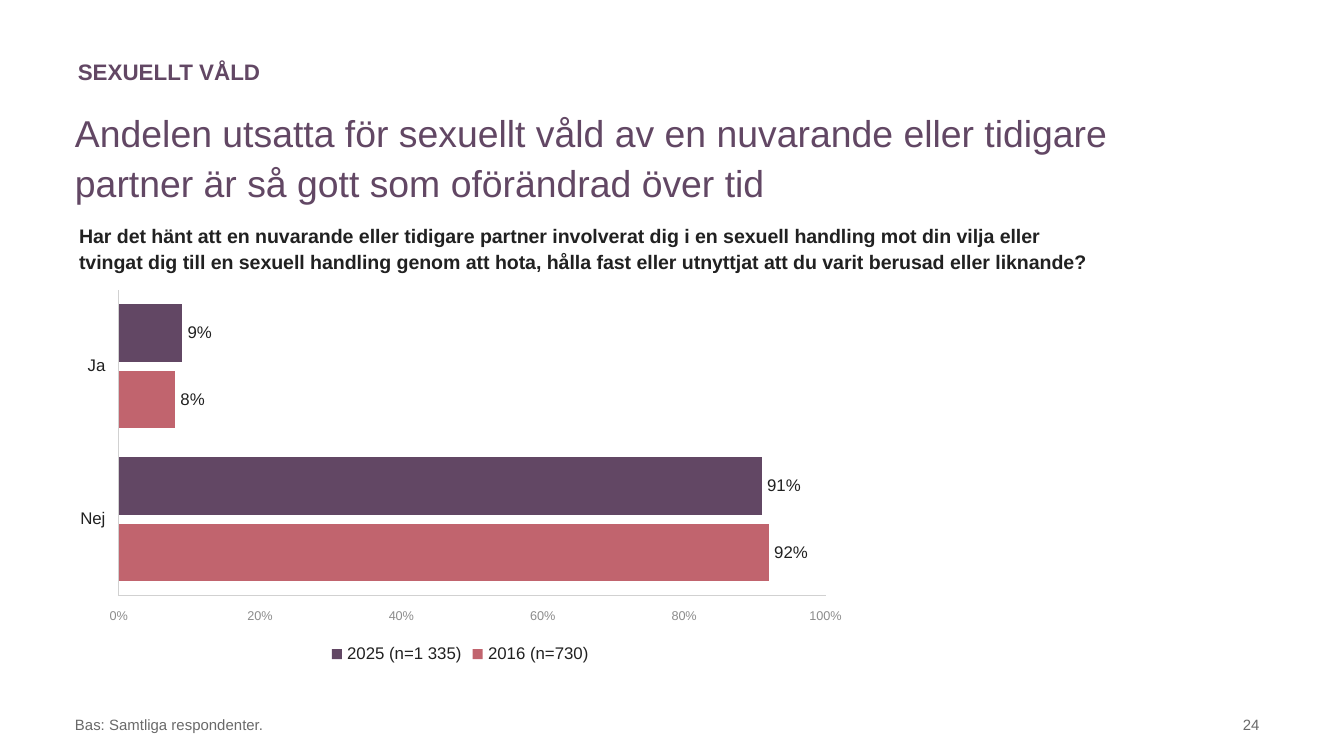
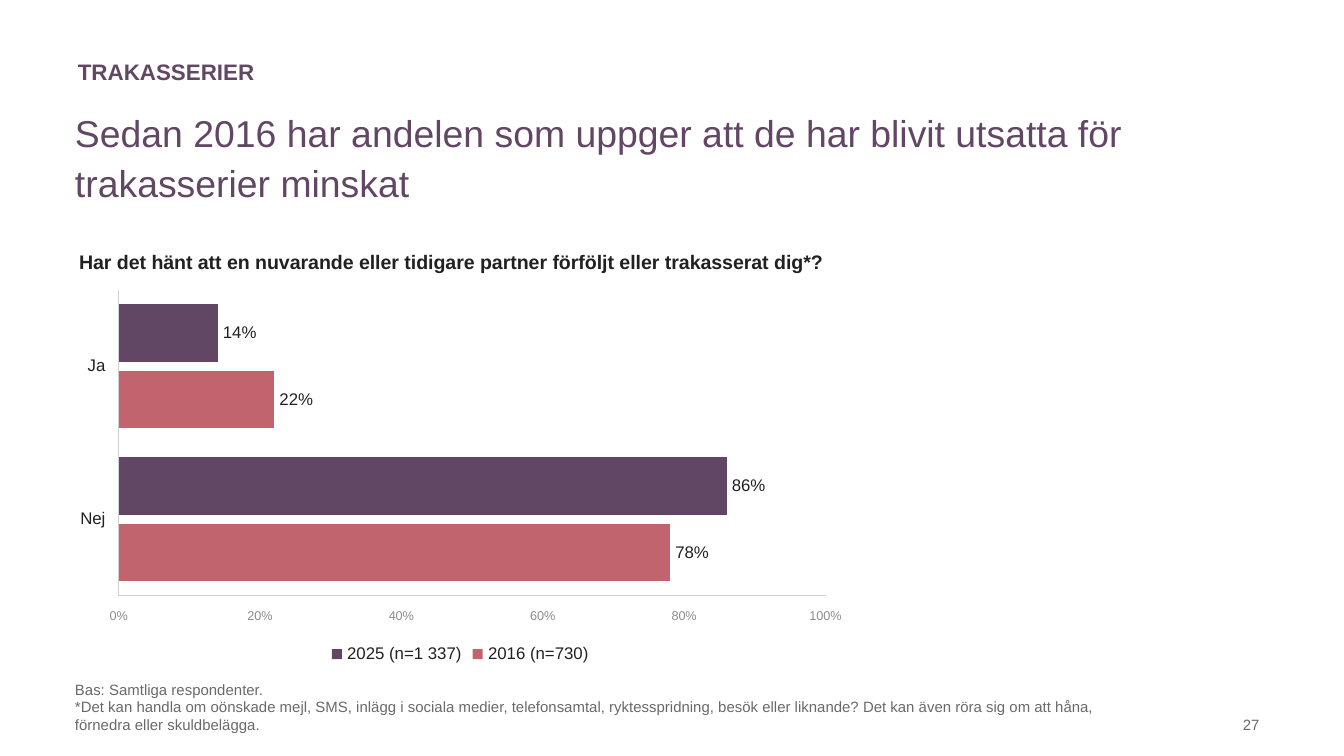
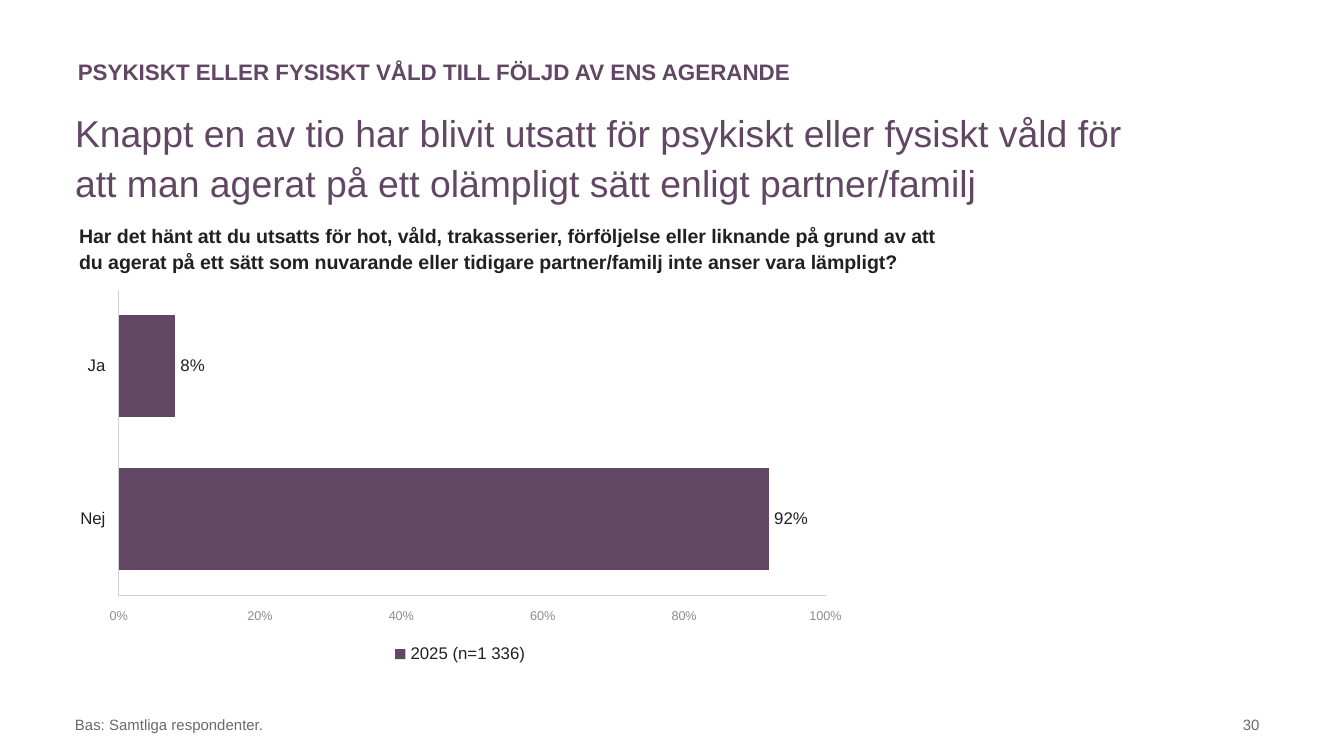
from pptx import Presentation
from pptx.chart.data import CategoryChartData
from pptx.dml.color import RGBColor
from pptx.enum.chart import (XL_CHART_TYPE, XL_LABEL_POSITION, XL_LEGEND_POSITION,
                             XL_TICK_LABEL_POSITION, XL_TICK_MARK)
from pptx.enum.text import MSO_ANCHOR, PP_ALIGN
from pptx.oxml import parse_xml
from pptx.oxml.ns import nsdecls
from pptx.util import Pt

COLORS = {"purple": "624764", "rose": "C1646E", "text": "212121",
          "footer": "696969", "scale": "8C8C8C", "axis": "D1D1D1"}
FONT = "Arial"
PERCENT = "General\\%"
CATEGORIES = ["Nej", "Ja"]
BASE = "Bas: Samtliga respondenter."

STYLES = {
    "section": {"size": 12, "bold": True, "color": "purple"},
    "headline": {"size": 20, "bold": False, "color": "purple"},
    "question": {"size": 10.5, "bold": True, "color": "text"},
    "footer": {"size": 8, "bold": False, "color": "footer"},
    "chart": {"size": 10, "bold": False, "color": "text"},
    "label": {"size": 9, "bold": False, "color": "text"},
    "scale": {"size": 6.8, "bold": False, "color": "scale"},
}

# left, top, width, height in points; None takes the width from the slide's content
BOXES = {
    "section": (34.6, 13.7, 514, 35.3),
    "headline": (33.1, 53.3, None, 61.9),
    "question": (35.3, 118.1, None, 31.7),
    "note": (33.1, 375.1, 561.6, 21.6),
    "number": (604.8, 375.1, 77, 21.6),
    "chart": (33.8, 151.2, 425.5, 207.4),
}
PLOT_AREA = {"x": 0.07, "y": 0.02, "w": 0.89, "h": 0.79}

SLIDES = [
    {
        "section": "SEXUELLT VÅLD",
        "headline": "Andelen utsatta för sexuellt våld av en nuvarande eller tidigare "
                    "partner är så gott som oförändrad över tid",
        "headline_width": 571.7,
        "question": "Har det hänt att en nuvarande eller tidigare partner involverat dig i "
                    "en sexuell handling mot din vilja eller tvingat dig till en sexuell "
                    "handling genom att hota, hålla fast eller utnyttjat att du varit "
                    "berusad eller liknande?",
        "question_width": 561.6,
        "notes": [BASE],
        "number": "24",
        "series": [("2016 (n=730)", (92, 8), "rose"),
                   ("2025 (n=1 335)", (91, 9), "purple")],
    },
    {
        "section": "TRAKASSERIER",
        "headline": "Sedan 2016 har andelen som uppger att de har blivit utsatta för "
                    "trakasserier minskat",
        "headline_width": 578.9,
        "question": "Har det hänt att en nuvarande eller tidigare partner förföljt eller "
                    "trakasserat dig*?",
        "question_width": 425.5,
        "notes": [BASE,
                  "*Det kan handla om oönskade mejl, SMS, inlägg i sociala medier, "
                  "telefonsamtal, ryktesspridning, besök eller liknande? Det kan även röra "
                  "sig om att håna, förnedra eller skuldbelägga."],
        "number": "27",
        "series": [("2016 (n=730)", (78, 22), "rose"),
                   ("2025 (n=1 337)", (86, 14), "purple")],
    },
    {
        "section": "PSYKISKT ELLER FYSISKT VÅLD TILL FÖLJD AV ENS AGERANDE",
        "headline": "Knappt en av tio har blivit utsatt för psykiskt eller fysiskt våld för "
                    "att man agerat på ett olämpligt sätt enligt partner/familj",
        "headline_width": 601.2,
        "question": "Har det hänt att du utsatts för hot, våld, trakasserier, förföljelse "
                    "eller liknande på grund av att du agerat på ett sätt som nuvarande "
                    "eller tidigare partner/familj inte anser vara lämpligt?",
        "question_width": 478.1,
        "notes": [BASE],
        "number": "30",
        "series": [("2025 (n=1 336)", (92, 8), "purple")],
    },
]


def rgb(name):
    return RGBColor.from_string(COLORS[name])


def set_attributes(target, values):
    for name, value in values.items():
        setattr(target, name, value)


def set_font(font, style):
    values = STYLES[style]
    set_attributes(font, {"name": FONT, "size": Pt(values["size"]), "bold": values["bold"]})
    font.color.rgb = rgb(values["color"])


def add_text(slide, box, style, lines, width=None, anchor=MSO_ANCHOR.BOTTOM, **paragraph_format):
    left, top, box_width, height = BOXES[box]
    shape = slide.shapes.add_textbox(Pt(left), Pt(top), Pt(width or box_width), Pt(height))
    frame = shape.text_frame
    set_attributes(frame, {"word_wrap": True, "vertical_anchor": anchor})
    frame.text = "\n".join(lines)
    for paragraph in frame.paragraphs:
        set_attributes(paragraph, paragraph_format)
        for run in paragraph.runs:
            set_font(run.font, style)


def add_heading(slide, content):
    add_text(slide, "section", "section", [content["section"]])
    add_text(slide, "headline", "headline", [content["headline"]],
             content["headline_width"], MSO_ANCHOR.TOP, line_spacing=1.1)
    add_text(slide, "question", "question", [content["question"]],
             content["question_width"], line_spacing=1.1)


def add_footer(slide, content):
    add_text(slide, "note", "footer", content["notes"])
    add_text(slide, "number", "footer", [content["number"]], alignment=PP_ALIGN.RIGHT)


def format_axis(axis, style):
    set_attributes(axis, {"has_major_gridlines": False,
                          "major_tick_mark": XL_TICK_MARK.NONE,
                          "minor_tick_mark": XL_TICK_MARK.NONE,
                          "tick_label_position": XL_TICK_LABEL_POSITION.LOW})
    axis.format.line.color.rgb = rgb("axis")
    axis.format.line.width = Pt(0.75)
    set_font(axis.tick_labels.font, style)


def place_plot_area(chart):
    """Fix the inner plot area as fractions of the chart."""
    plot_area = chart.plots[0]._element.getparent()
    for layout in plot_area.findall("{*}layout"):
        plot_area.remove(layout)
    modes = "".join(f'<c:{side}Mode val="edge"/>' for side in "xy")
    sizes = "".join(f'<c:{side} val="{value}"/>' for side, value in PLOT_AREA.items())
    plot_area.insert(0, parse_xml(
        f'<c:layout {nsdecls("c")}><c:manualLayout><c:layoutTarget val="inner"/>'
        f'{modes}{sizes}</c:manualLayout></c:layout>'))


def add_answer_chart(slide, series_rows):
    chart_data = CategoryChartData(number_format=PERCENT)
    chart_data.categories = CATEGORIES
    for name, values, _ in series_rows:
        chart_data.add_series(name, values)
    chart = slide.shapes.add_chart(XL_CHART_TYPE.BAR_CLUSTERED,
                                   *map(Pt, BOXES["chart"]), chart_data).chart
    set_attributes(chart, {"has_title": False, "has_legend": True})
    set_font(chart.font, "chart")
    set_attributes(chart.legend, {"position": XL_LEGEND_POSITION.BOTTOM,
                                  "include_in_layout": False})
    set_font(chart.legend.font, "label")

    format_axis(chart.category_axis, "label")
    format_axis(chart.value_axis, "scale")
    set_attributes(chart.value_axis, {"minimum_scale": 0, "maximum_scale": 100,
                                      "major_unit": 20})
    percent_format = {"number_format": PERCENT, "number_format_is_linked": False}
    set_attributes(chart.value_axis.tick_labels, percent_format)

    plot = chart.plots[0]
    set_attributes(plot, {"gap_width": 50, "overlap": -16, "vary_by_categories": False,
                          "has_data_labels": True})
    set_attributes(plot.data_labels, {"show_value": True,
                                      "position": XL_LABEL_POSITION.OUTSIDE_END,
                                      **percent_format})
    set_font(plot.data_labels.font, "label")
    for series, (_, _, color) in zip(plot.series, series_rows):
        series.invert_if_negative = False
        series.format.fill.solid()
        series.format.fill.fore_color.rgb = rgb(color)
    place_plot_area(chart)


def add_question_slide(presentation, content):
    slide = presentation.slides.add_slide(presentation.slide_layouts[6])
    add_heading(slide, content)
    add_footer(slide, content)
    add_answer_chart(slide, content["series"])


def main():
    presentation = Presentation()
    set_attributes(presentation, {"slide_width": Pt(720), "slide_height": Pt(405)})
    for content in SLIDES:
        add_question_slide(presentation, content)
    presentation.save("out.pptx")


if __name__ == "__main__":
    main()
